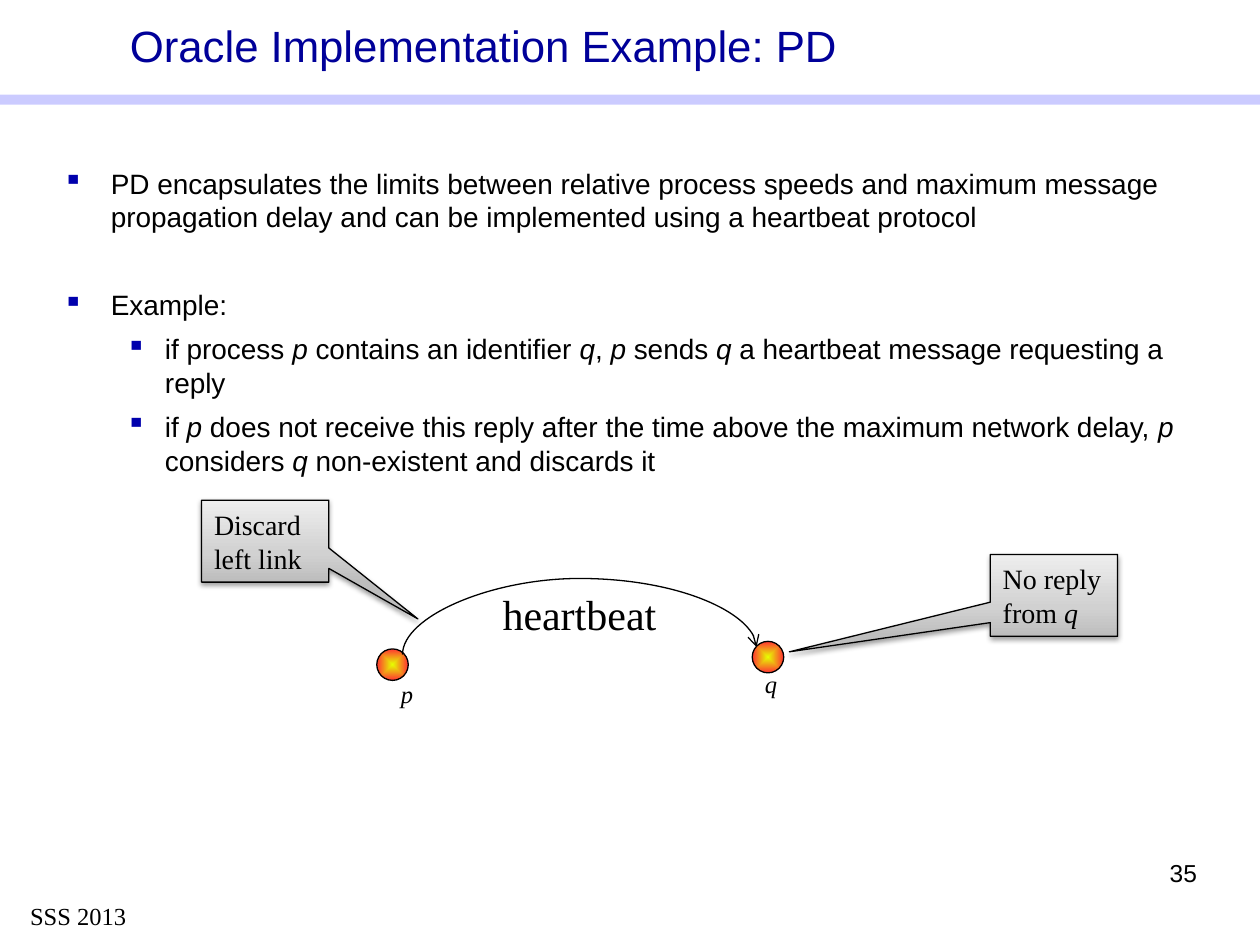
from dataclasses import dataclass

from lxml.etree import SubElement
from pptx import Presentation
from pptx.dml.color import RGBColor
from pptx.enum.shapes import MSO_CONNECTOR as Connector, MSO_SHAPE as Shape
from pptx.enum.text import MSO_ANCHOR as Anchor, PP_ALIGN as Align
from pptx.oxml.ns import qn
from pptx.util import Inches, Pt

BLACK = RGBColor(0x00, 0x00, 0x00)
NAVY = RGBColor(0x00, 0x00, 0x99)
BULLET_BLUE = RGBColor(0x00, 0x00, 0xAD)
LAVENDER = RGBColor(0x99, 0x99, 0xFF)
YELLOW = RGBColor(0xE6, 0xFF, 0x00)
RED = RGBColor(0xFF, 0x33, 0x33)
DARK_GRAY = RGBColor(0xBD, 0xBD, 0xBD)
MID_GRAY = RGBColor(0xD1, 0xD1, 0xD1)
LIGHT_GRAY = RGBColor(0xEE, 0xEE, 0xEE)
SANS, SERIF = "Arial", "Times New Roman"


def add_node(parent, tag, **attributes):
    node = SubElement(parent, qn(tag))
    for name, value in attributes.items():
        node.set(name, str(value))
    return node


@dataclass
class SlideBuilder:
    """Draws styled elements on the current slide."""

    page: object
    line_width: float = 0.75

    def add_spans(self, para, spans, size, font, color=BLACK):
        for text, italic in spans:
            span = para.add_run()
            span.text = text
            span.font.size = Pt(size)
            span.font.name = font
            span.font.italic = italic
            span.font.color.rgb = color

    def frame(self, place, wrap=True, inset=True):
        frame = self.page.shapes.add_textbox(*map(Inches, place)).text_frame
        frame.word_wrap = wrap
        if not inset:
            frame.margin_left = frame.margin_right = 0
            frame.margin_top = frame.margin_bottom = 0
        return frame

    def label(self, place, text, size, font=SERIF, color=BLACK, italic=False,
              align=Align.LEFT, wrap=False, inset=True, anchor=Anchor.TOP, spacing=None):
        frame = self.frame(place, wrap, inset)
        frame.vertical_anchor = anchor
        para = frame.paragraphs[0]
        para.alignment = align
        para.line_spacing = spacing
        self.add_spans(para, [(text, italic)], size, font, color)

    def bullets(self, place, items):
        frame = self.frame(place, inset=False)
        frame.margin_top = Inches(0.02)
        for index, (level, before, spans) in enumerate(items):
            para = frame.paragraphs[0] if index == 0 else frame.add_paragraph()
            para.level = level
            para.space_before = Pt(before)
            margin, hanging = ((0.38, 0.38), (0.81, 0.31))[level]
            properties = para._p.get_or_add_pPr()
            properties.set("marL", str(Inches(margin)))
            properties.set("indent", str(-Inches(hanging)))
            add_node(add_node(properties, "a:buClr"), "a:srgbClr", val=BULLET_BLUE)
            add_node(properties, "a:buChar", char="▪")
            self.add_spans(para, spans, 16, SANS)

    def outline(self, item):
        item.line.color.rgb = BLACK
        item.line.width = Pt(self.line_width)

    def shape(self, kind, place):
        shape = self.page.shapes.add_shape(kind, *map(Inches, place))
        shape.shadow.inherit = False
        return shape

    def band(self, place):
        shape = self.shape(Shape.RECTANGLE, place)
        shape.fill.solid()
        shape.fill.fore_color.rgb = LAVENDER
        shape.line.fill.background()
        color = shape._element.spPr.find(qn("a:solidFill"))[0]
        add_node(color, "a:alpha", val=50000)

    def gradient(self, shape, stops):
        shape.fill.gradient()
        gradient = shape._element.spPr.find(qn("a:gradFill"))
        for child in list(gradient):
            gradient.remove(child)
        stop_list = add_node(gradient, "a:gsLst")
        for position, color in stops:
            stop = add_node(stop_list, "a:gs", pos=position * 1000)
            add_node(stop, "a:srgbClr", val=color)
        return gradient

    def node(self, left, top):
        shape = self.shape(Shape.OVAL, (left, top, 0.25, 0.25))
        gradient = self.gradient(shape, [(0, YELLOW), (100, RED)])
        radial = add_node(gradient, "a:path", path="shape")
        add_node(radial, "a:fillToRect", l=50000, t=50000, r=50000, b=50000)
        self.outline(shape)

    def callout(self, left, top, tip, spans):
        shape = self.shape(Shape.RECTANGULAR_CALLOUT, (left, top, 1.01, 0.65))
        shape.adjustments[0], shape.adjustments[1] = tip
        gradient = self.gradient(shape, [(0, DARK_GRAY), (35, MID_GRAY), (100, LIGHT_GRAY)])
        add_node(gradient, "a:lin", ang=16200000, scaled=1)
        self.outline(shape)
        effects = shape._element.spPr.find(qn("a:effectLst"))
        shadow = add_node(effects, "a:outerShdw", blurRad=Pt(3.1), dist=Pt(1.6),
                          dir=5400000, rotWithShape=0)
        add_node(add_node(shadow, "a:srgbClr", val=BLACK), "a:alpha", val=38000)
        shape.text_frame.word_wrap = True
        para = shape.text_frame.paragraphs[0]
        para.alignment = Align.LEFT
        self.add_spans(para, spans, 16, SERIF)

    def arc_arrow(self, begin, end, bend):
        arc = self.page.shapes.add_connector(Connector.CURVE, *map(Inches, begin + end))
        self.outline(arc)
        properties = arc._element.spPr
        properties.find(qn("a:xfrm")).set("rot", "16200000")
        guides = properties.find(qn("a:prstGeom")).find(qn("a:avLst"))
        add_node(guides, "a:gd", name="adj1", fmla=f"val {round(bend * 100000)}")
        add_node(properties.find(qn("a:ln")), "a:headEnd", type="arrow")
        add_node(properties, "a:effectLst")


def main():
    deck = Presentation()
    deck.slide_width, deck.slide_height = Inches(10), Inches(7.5)
    builder = SlideBuilder(deck.slides.add_slide(deck.slide_layouts[6]))

    builder.band((0, 0.75, 10, 0.08))
    builder.label((0.14, 7.1, 0.97, 0.34), "SSS 2013", 14)
    builder.label((0, 0, 7.67, 0.75), "Oracle Implementation Example: PD", 25, SANS, NAVY,
                  align=Align.CENTER, wrap=True, inset=False, anchor=Anchor.MIDDLE,
                  spacing=0.98)
    p, q = ("p", True), ("q", True)
    builder.bullets((0.5, 1.3, 9, 2.74), [
        (0, 6, [("PD encapsulates the limits between relative process speeds and maximum "
                 "message propagation delay and can be implemented using a heartbeat "
                 "protocol", False)]),
        (0, 31, [("Example:", False)]),
        (1, 6, [("if process ", False), p, (" contains an identifier ", False), q,
                (", ", False), p, (" sends ", False), q,
                (" a heartbeat message requesting a reply", False)]),
        (1, 6, [("if ", False), p,
                (" does not receive this reply after the time above the maximum "
                 "network delay, ", False), ("p ", True), ("considers ", False), q,
                (" non-existent and discards it", False)]),
    ])
    builder.label((7.17, 6.83, 2.33, 0.52), "35", 14, SANS, align=Align.RIGHT,
                  wrap=True, inset=False, spacing=0.95)

    for name, label_at, node_at in (("p", (3.08, 5.34), (2.99, 5.15)),
                                    ("q", (5.97, 5.26), (5.97, 5.09))):
        builder.label((*label_at, 0.3, 0.34), name, 14, italic=True, align=Align.CENTER)
        builder.node(*node_at)
    builder.arc_arrow((4.63, 6.57), (4.57, 3.76), -9.09)
    builder.label((3.89, 4.62, 1.43, 0.5), "heartbeat", 24)
    builder.callout(7.86, 4.4, (-2.08, 0.69), [("No reply from ", False), q])
    builder.callout(1.6, 3.97, (1.2, 0.95), [("Discard left link", False)])

    deck.save("out.pptx")


if __name__ == "__main__":
    main()
